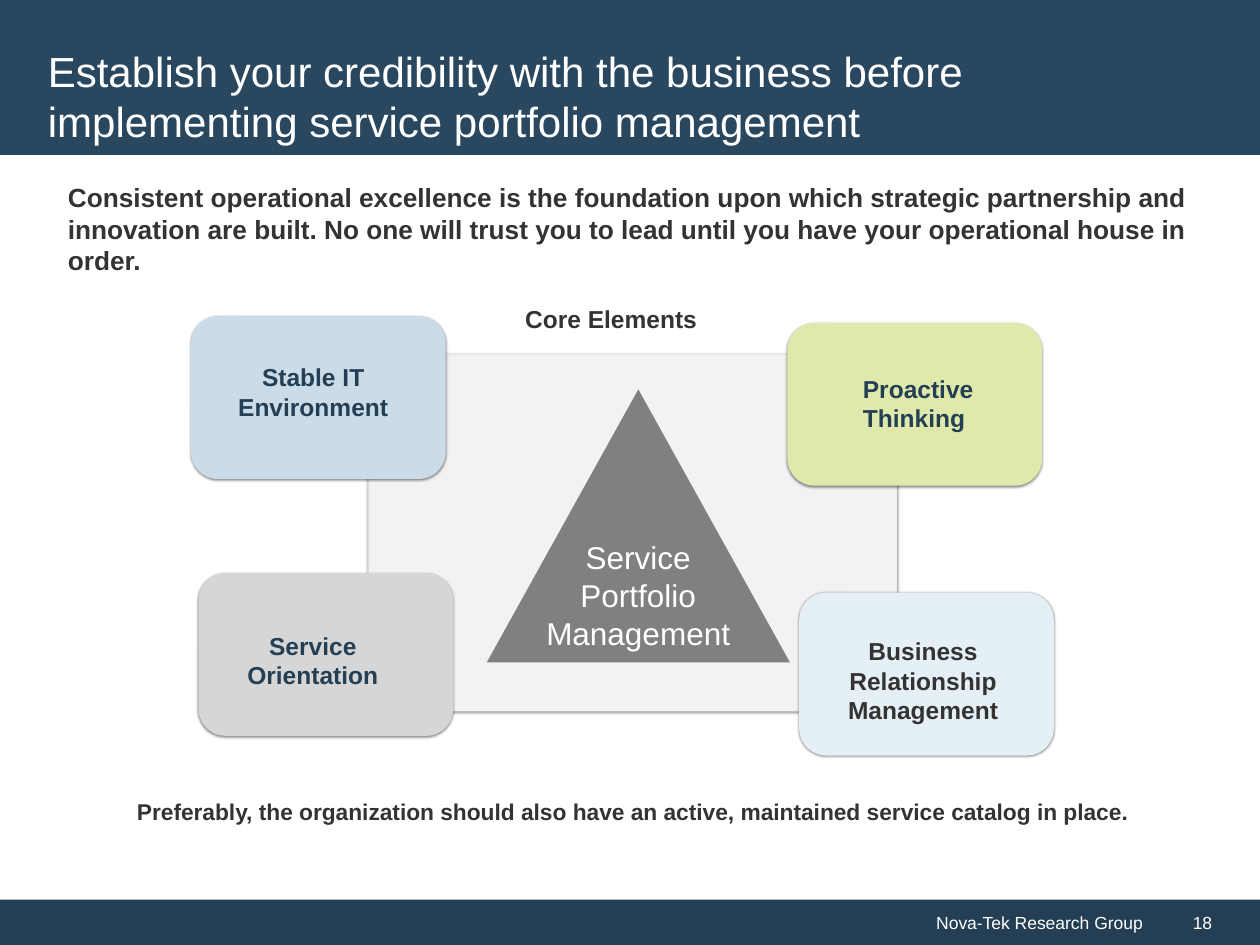
from dataclasses import dataclass

import pptx
import pptx.dml.color
import pptx.enum.shapes
import pptx.enum.text
import pptx.oxml
import pptx.util

Pt = pptx.util.Pt
SHAPE = pptx.enum.shapes.MSO_SHAPE
ALIGN = pptx.enum.text.PP_ALIGN
ANCHOR = pptx.enum.text.MSO_ANCHOR


@dataclass(frozen=True)
class Theme:
    font: str = "Arial"
    navy: str = "243F54"
    header: str = "29475F"
    white: str = "FFFFFF"
    ink: str = "333333"
    panel: str = "F2F2F2"
    triangle: str = "808080"
    blue: str = "CBDBE8"
    green: str = "E0E9AC"
    grey: str = "D6D6D6"
    pale_blue: str = "E5EFF6"
    title_size: float = 24
    lead_size: float = 15
    centre_size: float = 18
    label_size: float = 14
    note_size: float = 13
    footer_size: float = 10


THEME = Theme()
CARD_SIZE = (145.5, 93)


def rgb(colour):
    return pptx.dml.color.RGBColor.from_string(colour)


def add_block(slide, kind, box, fill, shadow=False):
    block = slide.shapes.add_shape(kind, *map(Pt, box))
    block.shadow.inherit = False
    block.fill.solid()
    block.fill.fore_color.rgb = rgb(fill)
    block.line.fill.background()
    if shadow:
        add_soft_shadow(block)
    return block


def add_soft_shadow(block):
    """Fill the empty effect list with a thin shadow below the block."""
    effects = block.element.spPr.find(pptx.oxml.ns.qn("a:effectLst"))
    effects.append(pptx.oxml.parse_xml(
        f'<a:outerShdw {pptx.oxml.ns.nsdecls("a")} blurRad="{Pt(1.5)}" '
        f'dist="{Pt(0.5)}" dir="5400000" algn="t" rotWithShape="0">'
        '<a:srgbClr val="000000"><a:alpha val="45000"/></a:srgbClr>'
        '</a:outerShdw>'))


def write(shape, paragraphs, size, colour, bold=False, align=ALIGN.LEFT,
          anchor=ANCHOR.TOP):
    frame = shape.text_frame
    frame.word_wrap = True
    frame.vertical_anchor = anchor
    for index, wording in enumerate(paragraphs):
        paragraph = frame.add_paragraph() if index else frame.paragraphs[0]
        paragraph.alignment = align
        run = paragraph.add_run()
        run.text = wording
        run.font.name = THEME.font
        run.font.size = Pt(size)
        run.font.bold = bold
        run.font.color.rgb = rgb(colour)


def add_text(slide, box, paragraphs, size, colour, **style):
    write(slide.shapes.add_textbox(*map(Pt, box)), paragraphs, size, colour,
          **style)


def add_header(slide):
    add_block(slide, SHAPE.RECTANGLE, (0, 0, 720, 88.5), THEME.header)
    add_text(slide, (20.3, 20.2, 679, 69),
             ["Establish your credibility with the business before "
              "implementing service portfolio management"],
             THEME.title_size, THEME.white, anchor=ANCHOR.MIDDLE)


def add_footer(slide):
    for left, width, wording, align, indent in (
            (0, 660, "Nova-Tek Research Group", ALIGN.RIGHT, 7.2),
            (660, 60, "18", ALIGN.LEFT, 21.6)):
        bar = add_block(slide, SHAPE.RECTANGLE, (left, 514, width, 26),
                        THEME.navy)
        bar.text_frame.margin_left = Pt(indent)
        write(bar, [wording], THEME.footer_size, THEME.white, align=align,
              anchor=ANCHOR.MIDDLE)


def add_centre(slide):
    add_block(slide, SHAPE.ISOSCELES_TRIANGLE, (278.2, 222.5, 173.2, 156),
              THEME.triangle)
    add_text(slide, (272.2, 304, 185, 73.5),
             ["Service", "Portfolio Management"],
             THEME.centre_size, THEME.white, align=ALIGN.CENTER)


def add_core_element(slide, corner, fill, label_box, label, colour, align):
    add_block(slide, SHAPE.ROUNDED_RECTANGLE, corner + CARD_SIZE, fill,
              shadow=True)
    add_text(slide, label_box, [label], THEME.label_size, colour, bold=True,
             align=align)


def main():
    deck = pptx.Presentation()
    deck.slide_width, deck.slide_height = Pt(720), Pt(540)
    slide = deck.slides.add_slide(deck.slide_layouts[6])

    add_header(slide)
    add_footer(slide)
    add_text(slide, (31.7, 100.1, 667.4, 105),
             ["Consistent operational excellence is the foundation upon which "
              "strategic partnership and innovation are built. No one will "
              "trust you to lead until you have your operational house in "
              "order."],
             THEME.lead_size, THEME.ink, bold=True)
    add_text(slide, (31.7, 452.2, 659, 23),
             ["Preferably, the organization should also have an active, "
              "maintained service catalog in place."],
             THEME.note_size, THEME.ink, bold=True, align=ALIGN.CENTER)

    add_block(slide, SHAPE.RECTANGLE, (210.5, 202.5, 302, 204), THEME.panel,
              shadow=True)
    add_text(slide, (293, 170, 136, 24.5), ["Core Elements"],
             THEME.label_size, THEME.ink, bold=True)
    core_elements = (
        ((113.5, 327.5), THEME.grey, (134, 357, 89.5, 41),
         "Service Orientation", THEME.navy, ALIGN.CENTER),
        ((450, 184.5), THEME.green, (486, 210, 103.5, 41),
         "Proactive Thinking", THEME.navy, ALIGN.LEFT),
        ((109.2, 180.7), THEME.blue, (105, 203.5, 148, 41),
         "Stable IT Environment", THEME.navy, ALIGN.CENTER),
        ((456.7, 338.7), THEME.pale_blue, (458, 360, 139, 58),
         "Business Relationship Management", THEME.ink, ALIGN.CENTER),
    )
    for element in core_elements:
        add_core_element(slide, *element)
    add_centre(slide)

    deck.save("out.pptx")


if __name__ == "__main__":
    main()
